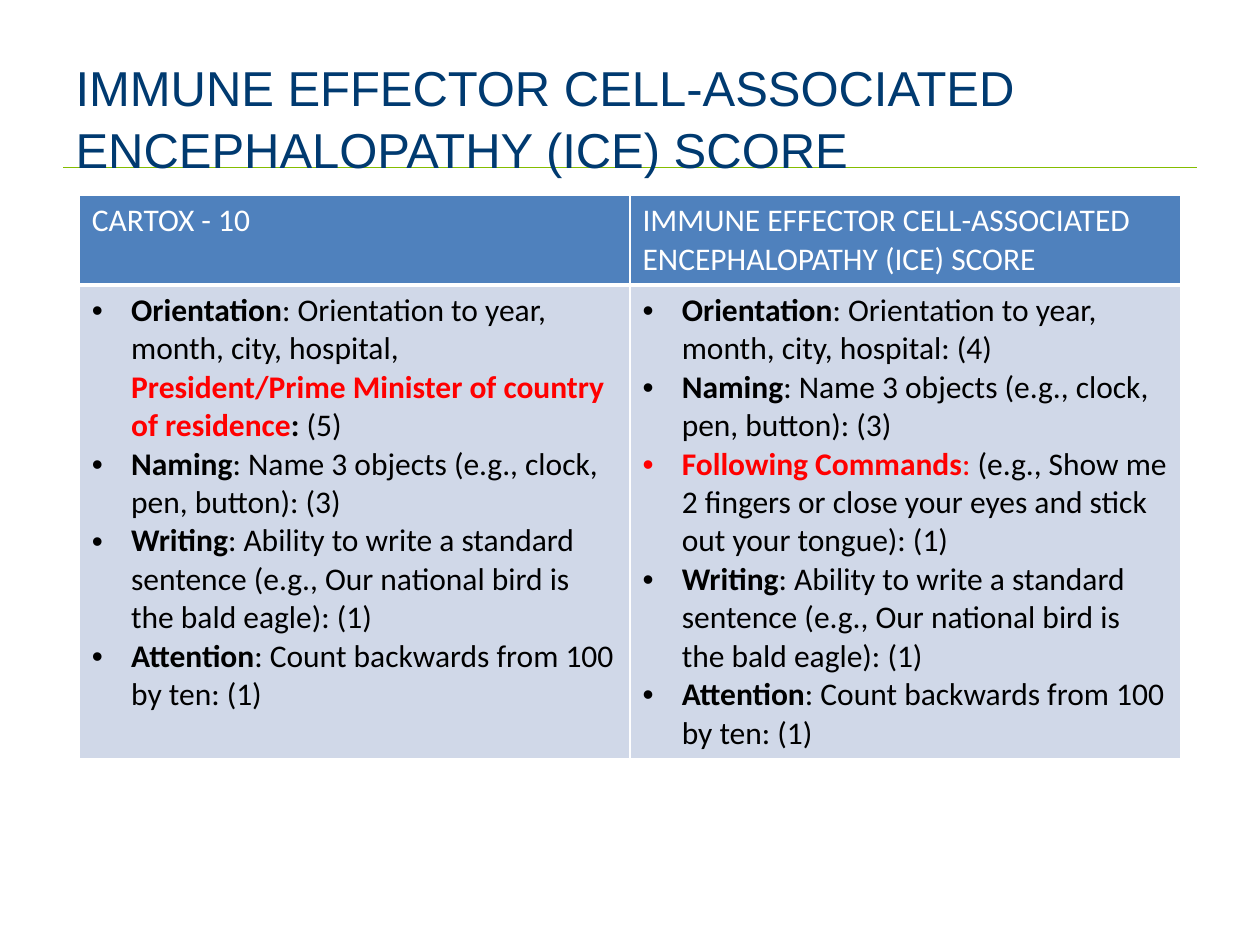
import pptx
import pptx.dml.color
import pptx.enum.shapes
import pptx.enum.text
import pptx.oxml
import pptx.oxml.ns
import pptx.util

Cm = pptx.util.Cm
Pt = pptx.util.Pt

COLORS = {
    "navy": "003A70",
    "green": "84BD00",
    "header": "4F81BD",
    "body": "D0D8E8",
    "white": "FFFFFF",
    "black": "000000",
    "red": "FF0000",
}
TITLE = "IMMUNE EFFECTOR CELL-ASSOCIATED ENCEPHALOPATHY (ICE) SCORE"
HEADERS = ["CARTOX - 10", TITLE]

# Each item is a list of runs: text, colour, bold
NAMING = [("Naming", "black", True),
          (": Name 3 objects (e.g., clock, pen, button): (3)", "black", False)]
WRITING = [("Writing", "black", True),
           (": Ability to write a standard sentence (e.g., Our national bird "
            "is the bald eagle): (1)", "black", False)]
ATTENTION = [("Attention", "black", True),
             (": Count backwards from 100 by ten: (1)", "black", False)]
CARTOX = [
    [("Orientation", "black", True),
     (": Orientation to year, month, city, hospital, ", "black", False),
     ("President/Prime Minister of country of residence", "red", True),
     (": ", "black", True),
     ("(5)", "black", False)],
    NAMING, WRITING, ATTENTION,
]
ICE = [
    [("Orientation", "black", True),
     (": Orientation to year, month, city, hospital: (4)", "black", False)],
    NAMING,
    [("Following Commands", "red", True),
     (": ", "red", False),
     ("(e.g., Show me 2 fingers or close your eyes and stick out your "
      "tongue): (1)", "black", False)],
    WRITING, ATTENTION,
]


def rgb(name):
    return pptx.dml.color.RGBColor.from_string(COLORS[name])


def make_element(xml):
    """Parse a one-element DrawingML string with the a: prefix declared."""
    head, rest = xml.split(" ", 1)
    return pptx.oxml.parse_xml(f"{head} {pptx.oxml.ns.nsdecls('a')} {rest}")


def add_run(p, text, size, font, color, bold=False):
    r = p.add_run()
    r.text = text
    r.font.size = Pt(size)
    r.font.name = font
    r.font.bold = bold
    r.font.color.rgb = rgb(color)


def add_title(s):
    sp = s.shapes.title
    sp.left, sp.top, sp.width, sp.height = Cm(1.27), Cm(0.76), Cm(22.86), Cm(3.18)
    tf = sp.text_frame
    tf.auto_size = pptx.enum.text.MSO_AUTO_SIZE.NONE
    tf.vertical_anchor = pptx.enum.text.MSO_ANCHOR.MIDDLE
    p = tf.paragraphs[0]
    p.alignment = pptx.enum.text.PP_ALIGN.LEFT
    p.line_spacing = 1.05
    add_run(p, TITLE, 28, "Arial", "navy")


def add_rule(s):
    """Draw the line under the title, behind the title text."""
    line = s.shapes.add_connector(pptx.enum.shapes.MSO_CONNECTOR.STRAIGHT,
                                  Cm(1.27), Cm(3.37), Cm(24.13), Cm(3.37))
    line.line.color.rgb = rgb("green")
    line.line.width = Pt(0.75)
    line._element.spPr.append(make_element("<a:effectLst />"))
    s.shapes.title._element.addprevious(line._element)


def style_cell(cell, fill, bottom=1):
    cell.fill.solid()
    cell.fill.fore_color.rgb = rgb(fill)
    tcPr = cell._tc.get_or_add_tcPr()
    for i, (side, width) in enumerate(zip("LRTB", (1, 1, 1, bottom))):
        tcPr.insert(i, make_element(
            f'<a:ln{side} w="{Pt(width)}"><a:solidFill>'
            f'<a:srgbClr val="{COLORS["white"]}"/></a:solidFill></a:ln{side}>'))


def add_bullets(cell, items):
    tf = cell.text_frame
    for i, runs in enumerate(items):
        p = tf.add_paragraph() if i else tf.paragraphs[0]
        pPr = p._p.get_or_add_pPr()
        pPr.set("marL", str(Cm(0.79)))
        pPr.set("indent", str(-Cm(0.79)))
        pPr.append(make_element('<a:buFont typeface="Arial"/>'))
        pPr.append(make_element('<a:buChar char="•"/>'))
        for text, color, bold in runs:
            add_run(p, text, 18, "Calibri", color, bold)


def add_score_table(s):
    table = s.shapes.add_table(2, 2, Cm(1.6), Cm(3.94), Cm(22.2), Cm(11.26)).table
    table.rows[0].height, table.rows[1].height = Cm(1.8), Cm(9.46)
    for col, (header, items) in enumerate(zip(HEADERS, (CARTOX, ICE))):
        table.columns[col].width = Cm(11.1)
        head, body = table.cell(0, col), table.cell(1, col)
        style_cell(head, "header", bottom=3)
        add_run(head.text_frame.paragraphs[0], header, 18, "Calibri", "white")
        style_cell(body, "body")
        add_bullets(body, items)


def main():
    prs = pptx.Presentation()
    prs.slide_width, prs.slide_height = Cm(25.4), Cm(19.05)
    s = prs.slides.add_slide(prs.slide_layouts[5])
    add_title(s)
    add_rule(s)
    add_score_table(s)
    prs.save("out.pptx")


if __name__ == "__main__":
    main()
